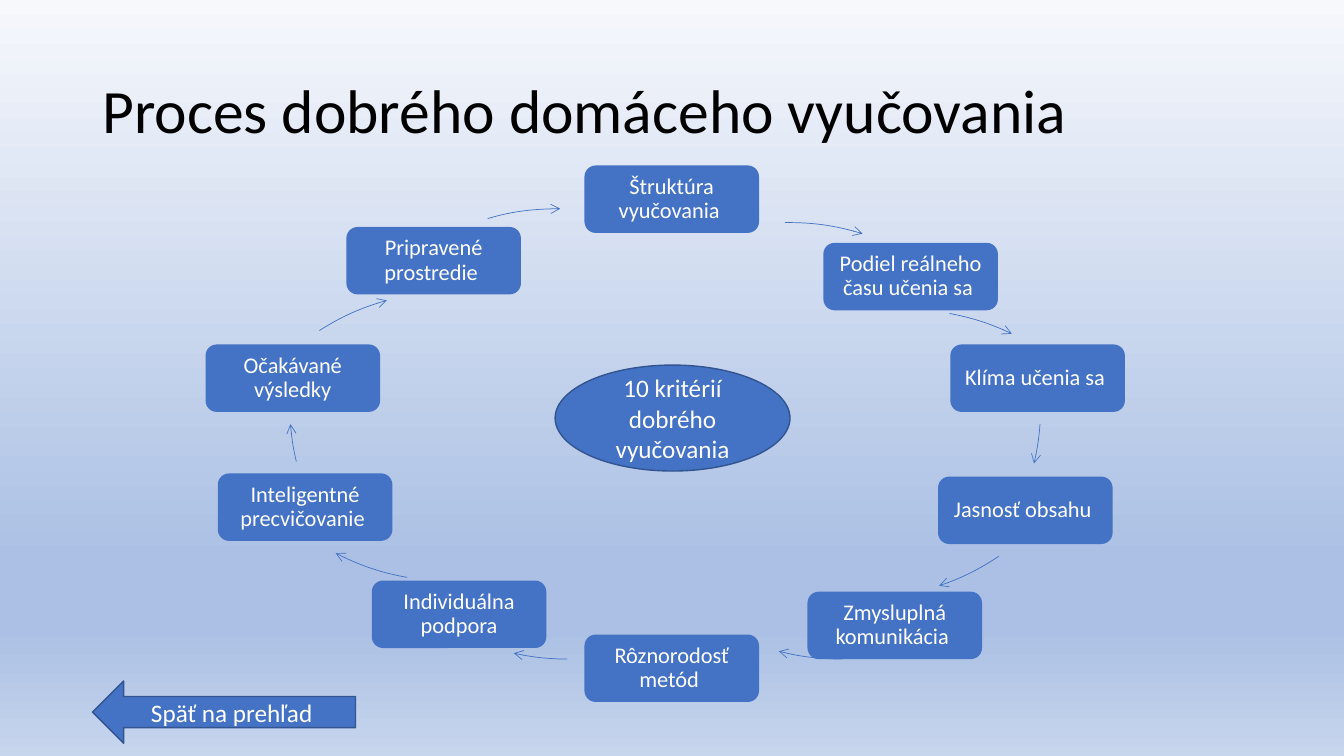
import math

import pptx
import pptx.dml.color
import pptx.enum.shapes
import pptx.enum.text
import pptx.oxml.ns
import pptx.util
from lxml import etree

Cm = pptx.util.Cm
Pt = pptx.util.Pt
RGBColor = pptx.dml.color.RGBColor
SHAPE = pptx.enum.shapes.MSO_SHAPE
ALIGN = pptx.enum.text.PP_ALIGN
MIDDLE = pptx.enum.text.MSO_ANCHOR.MIDDLE
qn = pptx.oxml.ns.qn

BLUE = RGBColor(0x44, 0x72, 0xC4)
DARK_BLUE = RGBColor(0x32, 0x54, 0x91)
WHITE = RGBColor(0xFF, 0xFF, 0xFF)
BLACK = RGBColor(0, 0, 0)
FONT = "Calibri"

# Gradient from top to bottom: percent, colour
BACKDROP = [
    (0, RGBColor(0xF6, 0xF8, 0xFC)),
    (74, RGBColor(0xAB, 0xC0, 0xE4)),
    (83, RGBColor(0xAB, 0xC0, 0xE4)),
    (100, RGBColor(0xC7, 0xD5, 0xED)),
]

TITLE = "Proces dobrého domáceho vyučovania"
CENTRE = "10 kritérií dobrého vyučovania"
BACK = "Späť na prehľad"

# Criterion and left, top of its box; then for the arc that follows:
# left, top of its circle, start, end (cm)
CRITERIA = [
    ("Štruktúra vyučovania ", (14.73, 4.17),
     (13.46, 5.59), (19.79, 5.61), (21.74, 5.89)),
    ("Podiel reálneho času učenia sa ", (20.75, 6.12),
     (16.36, 7.77), (23.93, 7.9), (25.5, 8.41)),
    ("Klíma učenia sa ", (23.95, 8.68),
     (13.46, 3.84), (26.21, 10.69), (26.06, 11.68)),
    ("Jasnosť obsahu ", (23.64, 12.01),
     (15.29, 2.31), (25.17, 14.02), (23.67, 14.76)),
    ("Zmysluplná komunikácia ", (20.35, 14.91),
     (14.94, 3.86), (21.23, 16.61), (19.63, 16.41)),
    ("Rôznorodosť metód ", (14.73, 15.99),
     (8, 3.84), (14.3, 16.61), (12.95, 16.46)),
    ("Individuálna podpora", (9.37, 14.63),
     (5, 1.88), (10.26, 14.55), (8.46, 13.94)),
    ("Inteligentné precvičovanie ", (5.49, 11.93),
     (7.29, 3.73), (7.47, 11.63), (7.32, 10.69)),
    ("Očakávané výsledky", (5.18, 8.68),
     (5.08, 7.34), (8.05, 8.33), (9.75, 7.57)),
    ("Pripravené prostredie ", (8.73, 5.72),
     (7.75, 5.26), (12.29, 5.51), (14.12, 5.26)),
]
BOX_WIDTH, BOX_HEIGHT = 4.4, 1.7
CIRCLE = 12.78


def write(shape, text, size, colour, align, spacing=1.0):
    frame = shape.text_frame
    frame.word_wrap = True
    frame.vertical_anchor = MIDDLE
    paragraph = frame.paragraphs[0]
    paragraph.alignment = align
    paragraph.line_spacing = spacing
    run = paragraph.add_run()
    run.text = text
    run.font.name = FONT
    run.font.size = Pt(size)
    run.font.color.rgb = colour


def add_block(slide, kind, left, top, width, height, outlined=True):
    block = slide.shapes.add_shape(kind, Cm(left), Cm(top), Cm(width), Cm(height))
    block.shadow.inherit = False
    block.fill.solid()
    block.fill.fore_color.rgb = BLUE
    if outlined:
        block.line.color.rgb = DARK_BLUE
        block.line.width = Pt(1)
    else:
        block.line.fill.background()
    return block


def curve_points(corner, start, end):
    """Bezier points of the clockwise arc, measured from the circle's corner."""
    radius = CIRCLE / 2
    (x1, y1), (x2, y2) = [(x - corner[0] - radius, y - corner[1] - radius)
                          for x, y in (start, end)]
    sweep = (math.atan2(y2, x2) - math.atan2(y1, x1)) % math.tau
    pull = 4 / 3 * math.tan(sweep / 4)
    points = [(x1, y1), (x1 - pull * y1, y1 + pull * x1),
              (x2 + pull * y2, y2 - pull * x2), (x2, y2)]
    return [(Cm(x + radius), Cm(y + radius)) for x, y in points]


def add_arc(slide, corner, start, end):
    points = curve_points(corner, start, end)
    builder = slide.shapes.build_freeform(*points[0])
    builder.add_line_segments(points[-1:], close=False)
    arc = builder.convert_to_shape()
    arc.left, arc.top = Cm(corner[0]), Cm(corner[1])
    arc.width = arc.height = Cm(CIRCLE)

    outline = arc.element.find(".//" + qn("a:path"))
    for step in list(outline):
        outline.remove(step)
    outline.set("w", str(Cm(CIRCLE)))
    outline.set("h", str(Cm(CIRCLE)))
    for tag, part in (("a:moveTo", points[:1]), ("a:cubicBezTo", points[1:])):
        step = etree.SubElement(outline, qn(tag))
        for x, y in part:
            etree.SubElement(step, qn("a:pt"), x=str(x), y=str(y))

    arc.shadow.inherit = False
    arc.fill.background()
    arc.line.color.rgb = BLUE
    arc.line.width = Pt(0.5)
    line = arc.element.spPr.find(qn("a:ln"))
    etree.SubElement(line, qn("a:tailEnd"), type="arrow")


def paint_backdrop(slide):
    fill = slide.background.fill
    fill.gradient()
    fill.gradient_angle = 270
    stops = slide.element.find(".//" + qn("a:gsLst"))
    for stop in list(stops):
        stops.remove(stop)
    for percent, colour in BACKDROP:
        stop = etree.SubElement(stops, qn("a:gs"), pos=str(percent * 1000))
        etree.SubElement(stop, qn("a:srgbClr"), val=str(colour))


def main():
    deck = pptx.Presentation()
    deck.slide_width, deck.slide_height = Cm(33.87), Cm(19.05)
    slide = deck.slides.add_slide(deck.slide_layouts[5])
    paint_backdrop(slide)

    title = slide.shapes.title
    title.left, title.top = Cm(2.33), Cm(1.01)
    title.width, title.height = Cm(29.21), Cm(3.68)
    write(title, TITLE, 44, BLACK, ALIGN.LEFT, 0.9)

    for criterion, (left, top), corner, start, end in CRITERIA:
        box = add_block(slide, SHAPE.ROUNDED_RECTANGLE, left, top,
                        BOX_WIDTH, BOX_HEIGHT, outlined=False)
        frame = box.text_frame
        frame.margin_left = frame.margin_right = 0
        frame.margin_top = frame.margin_bottom = Cm(0.18)
        write(box, criterion, 16, WHITE, ALIGN.CENTER, 0.9)
        add_arc(slide, corner, start, end)

    back = add_block(slide, SHAPE.LEFT_ARROW, 2.33, 17.16, 6.63, 1.57)
    write(back, BACK, 18, WHITE, ALIGN.CENTER)
    centre = add_block(slide, SHAPE.OVAL, 13.99, 9.2, 5.92, 2.67)
    write(centre, CENTRE, 18, WHITE, ALIGN.CENTER)

    deck.save("out.pptx")


if __name__ == "__main__":
    main()
